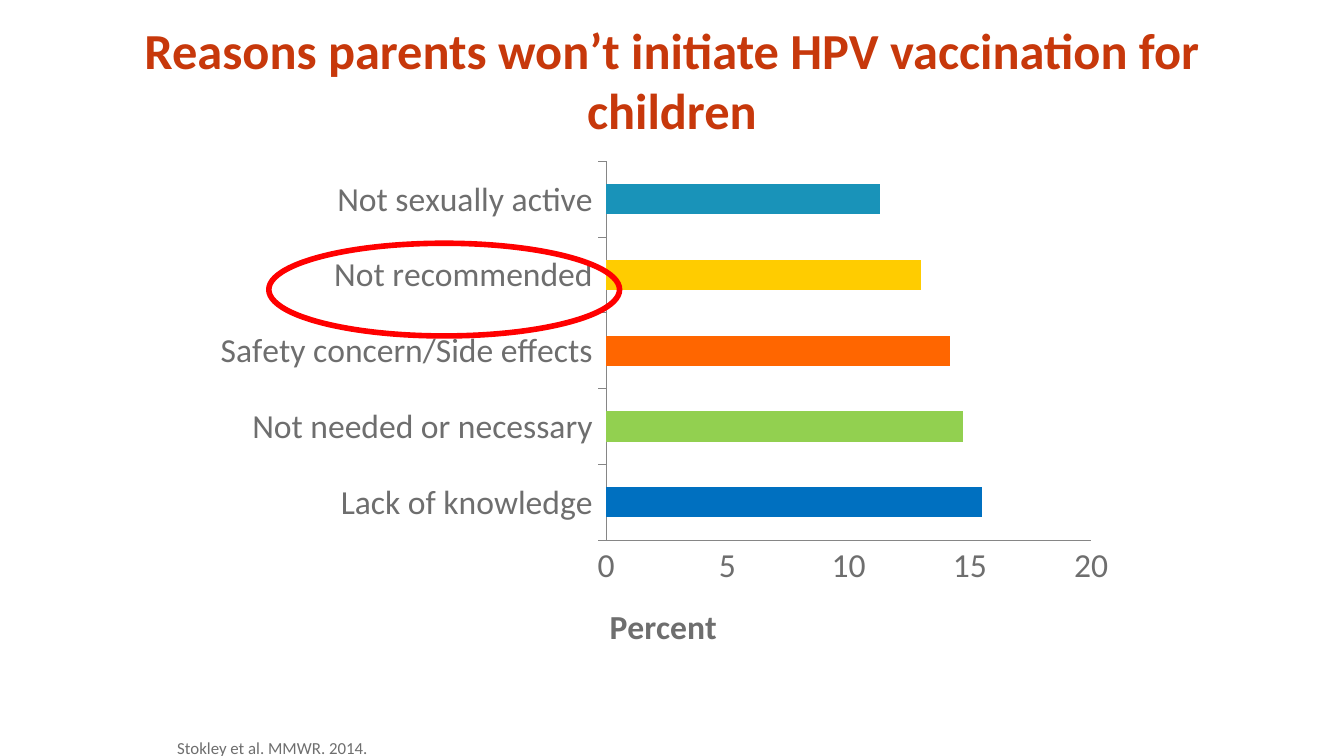
from dataclasses import dataclass
from typing import Any

import lxml.etree
import pptx
import pptx.chart.data
import pptx.dml.color
import pptx.enum.chart
import pptx.enum.shapes
import pptx.enum.text
import pptx.oxml.ns
import pptx.util

Inches = pptx.util.Inches
FONT = "Calibri"
GREY = "6E6E6E"
AXIS_GREY = "868686"
SLIDE_WIDTH = 10
SLIDE_HEIGHT = SLIDE_WIDTH * 9 / 16


@dataclass
class Reason:
    label: str
    percent: float
    color: str


@dataclass
class Box:
    left: float
    top: float
    width: float
    height: float

    def lengths(self) -> tuple:
        return tuple(Inches(n) for n in (self.left, self.top, self.width, self.height))


REASONS = [
    Reason("Lack of knowledge", 15.5, "0070C0"),
    Reason("Not needed or necessary", 14.7, "92D050"),
    Reason("Safety concern/Side effects", 14.2, "FF6600"),
    Reason("Not recommended", 13, "FFCC00"),
    Reason("Not sexually active", 11.3, "1993B9"),
]


def rgb(value: str) -> pptx.dml.color.RGBColor:
    return pptx.dml.color.RGBColor.from_string(value)


def set_values(target: Any, values: dict) -> None:
    for name, value in values.items():
        setattr(target, name, value)


def set_font(font: Any, size: float, color: str, bold: bool = False) -> None:
    set_values(font, {"name": FONT, "size": pptx.util.Pt(size), "bold": bold})
    font.color.rgb = rgb(color)


def set_layout(parent: Any, position: int, values: dict) -> None:
    """Place a chart part by fractions of the chart's size."""
    qn = pptx.oxml.ns.qn
    layout = parent.find(qn("c:layout"))
    if layout is None:
        layout = parent.makeelement(qn("c:layout"), {})
        parent.insert(position, layout)
    manual = lxml.etree.SubElement(layout, qn("c:manualLayout"))
    for name, value in values.items():
        lxml.etree.SubElement(manual, qn(f"c:{name}"), val=str(value))


def write_text(shape: Any, text: str, size: float, color: str, bold: bool, align: Any) -> None:
    frame = shape.text_frame
    frame.word_wrap = True
    paragraph = frame.paragraphs[0]
    paragraph.alignment = align
    run = paragraph.add_run()
    run.text = text
    set_font(run.font, size, color, bold)


def add_reasons_chart(slide: Any, box: Box) -> None:
    data = pptx.chart.data.CategoryChartData()
    data.categories = [reason.label for reason in REASONS]
    data.add_series("Series 1", [reason.percent for reason in REASONS])
    chart = slide.shapes.add_chart(
        pptx.enum.chart.XL_CHART_TYPE.BAR_CLUSTERED, *box.lengths(), data
    ).chart
    set_values(chart, {"has_legend": False, "has_title": False})
    set_font(chart.font, 18, "000000")

    # Bars, one colour for each reason
    plot = chart.plots[0]
    set_values(plot, {"gap_width": 150, "vary_by_categories": False})
    series = plot.series[0]
    series.format.fill.solid()
    series.format.fill.fore_color.rgb = rgb("DDDDDD")
    for index, reason in enumerate(REASONS):
        fill = series.points[index].format.fill
        fill.solid()
        fill.fore_color.rgb = rgb(reason.color)

    # Axes
    marks = pptx.enum.chart.XL_TICK_MARK
    axes = (
        (chart.category_axis, {"major_tick_mark": marks.OUTSIDE}),
        (chart.value_axis, {"major_tick_mark": marks.NONE, "major_unit": 5,
                            "minimum_scale": 0, "maximum_scale": 20}),
    )
    for axis, values in axes:
        set_values(axis, {"has_major_gridlines": False, "minor_tick_mark": marks.NONE, **values})
        set_font(axis.tick_labels.font, 18, GREY)
        axis.format.line.color.rgb = rgb(AXIS_GREY)
        axis.format.line.width = pptx.util.Pt(0.5)
        set_values(axis.tick_labels, {"number_format": "General",
                                      "number_format_is_linked": False})

    # Axis title and plot, measured in inches from the chart's corner
    title = chart.value_axis.axis_title
    run = title.text_frame.paragraphs[0].add_run()
    run.text = "Percent"
    set_font(run.font, 18, GREY, True)
    edges = {"xMode": "edge", "yMode": "edge"}
    set_layout(title._element, 1, {**edges, "x": 2.99 / box.width, "y": 3.32 / box.height})

    plot_area = chart._chartSpace.chart.plotArea
    set_layout(plot_area, 0, {"layoutTarget": "inner", **edges,
                              "x": 3.01 / box.width, "y": 0.08 / box.height,
                              "w": 3.61 / box.width, "h": 2.82 / box.height})


def add_highlight(slide: Any, box: Box) -> None:
    ellipse = slide.shapes.add_shape(pptx.enum.shapes.MSO_SHAPE.OVAL, *box.lengths())
    ellipse.shadow.inherit = False
    ellipse.fill.background()
    ellipse.line.color.rgb = rgb("FF0000")
    ellipse.line.width = pptx.util.Pt(3)


def main() -> None:
    presentation = pptx.Presentation()
    set_values(presentation, {"slide_width": Inches(SLIDE_WIDTH),
                              "slide_height": Inches(SLIDE_HEIGHT)})
    slide = presentation.slides.add_slide(presentation.slide_layouts[5])
    align = pptx.enum.text.PP_ALIGN

    # Title
    title = slide.shapes.title
    names = ("left", "top", "width", "height")
    set_values(title, dict(zip(names, Box(0.5, 0.12, 9, 0.94).lengths())))
    title.text_frame.vertical_anchor = pptx.enum.text.MSO_ANCHOR.MIDDLE
    write_text(title, "Reasons parents won’t initiate HPV vaccination for children",
               27, "C7380B", True, align.CENTER)

    # Chart with the highlighted reason
    add_reasons_chart(slide, Box(1.5, 1.12, 6.88, 3.94))
    add_highlight(slide, Box(2, 1.81, 2.61, 0.69))

    # Reference
    reference = slide.shapes.add_textbox(*Box(1.22, 5.44, 2.31, 0.19).lengths())
    write_text(reference, "Stokley et al. MMWR. 2014.", 9, GREY, False, align.LEFT)

    presentation.save("out.pptx")


if __name__ == "__main__":
    main()
